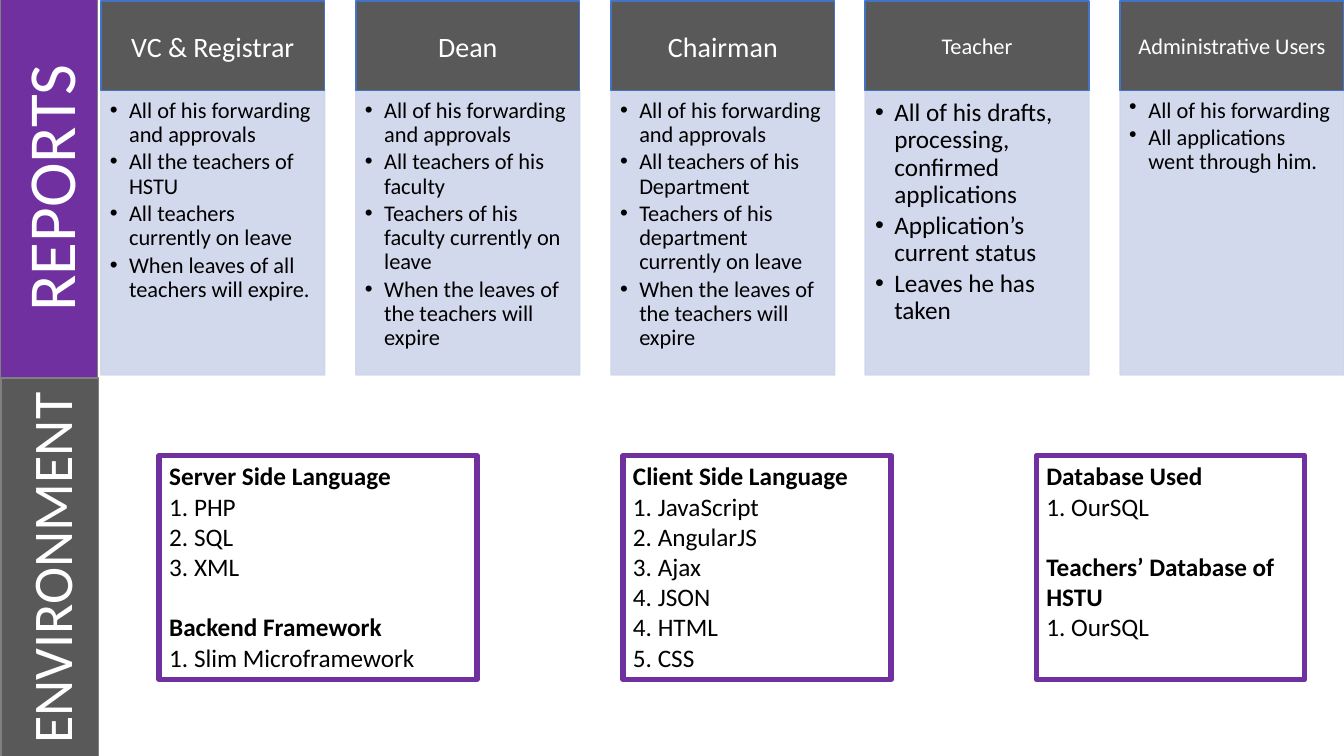
from dataclasses import dataclass

import lxml.etree
import pptx
import pptx.dml.color
import pptx.enum.shapes
import pptx.enum.text
import pptx.oxml.ns
import pptx.shapes.autoshape
import pptx.slide
import pptx.util

EMU_PER_PX = 9144
COMPARISON_LAYOUT = 4
CARD_LEFT, CARD_SPAN, CARD_WIDTH = 100, 1011, 222
HEADER_TOP, HEADER_HEIGHT = 1, 89
LIST_TOP, LIST_HEIGHT = 89, 283
BULLET_INDENT = 19
PANEL_TOP, PANEL_HEIGHT = 452, 222

Anchor = pptx.enum.text.MSO_ANCHOR
Align = pptx.enum.text.PP_ALIGN
Shape = pptx.shapes.autoshape.Shape


@dataclass(frozen=True)
class Theme:
    font: str = "Calibri"
    purple: str = "7030A0"
    slate: str = "595959"
    banner_edge: str = "808080"
    header_edge: str = "4472C4"
    card: str = "CFD5EA"
    light: str = "FFFFFF"
    dark: str = "000000"
    reports: int = 48
    environment: int = 40
    large: int = 20
    medium: int = 18
    small: int = 16
    hairline: int = 1
    frame: int = 4
    card_alpha: int = 90
    bullet_gap: float = 0.15
    blank_line: float = 21.6


@dataclass(frozen=True)
class Area:
    left: int
    top: int
    width: int
    height: int


@dataclass(frozen=True)
class Insets:
    left: int
    top: int
    right: int
    bottom: int


@dataclass(frozen=True)
class Card:
    title: str
    items: tuple[str, ...]
    title_size: int
    item_size: int
    insets: Insets


@dataclass(frozen=True)
class Section:
    heading: str
    entries: tuple[str, ...]


@dataclass(frozen=True)
class Panel:
    left: int
    width: int
    sections: tuple[Section, ...]


THEME = Theme()
PLAIN_INSETS = Insets(10, 5, 10, 5)
HEADER_INSETS = Insets(12, 7, 12, 7)
LIST_INSETS = Insets(9, 9, 12, 14)
WIDE_LIST_INSETS = Insets(10, 10, 14, 16)

FORWARDING = "All of his forwarding"
APPROVALS = "All of his forwarding and approvals"
EXPIRY = "When the leaves of the teachers will expire"

CARDS = (
    Card("VC & Registrar",
         (APPROVALS, "All the teachers of HSTU", "All teachers currently on leave",
          "When leaves of all teachers will expire."),
         THEME.large, THEME.small, LIST_INSETS),
    Card("Dean",
         (APPROVALS, "All teachers of his faculty",
          "Teachers of his faculty currently on leave", EXPIRY),
         THEME.large, THEME.small, LIST_INSETS),
    Card("Chairman",
         (APPROVALS, "All teachers of his Department",
          "Teachers of his department currently on leave", EXPIRY),
         THEME.large, THEME.small, LIST_INSETS),
    Card("Teacher",
         ("All of his drafts, processing, confirmed applications",
          "Application’s current status", "Leaves he has taken"),
         THEME.small, THEME.medium, WIDE_LIST_INSETS),
    Card("Administrative Users",
         (FORWARDING, "All applications went through him."),
         THEME.small, THEME.small, LIST_INSETS),
)

PANELS = (
    Panel(158, 315, (
        Section("Server Side Language", ("1. PHP", "2. SQL", "3. XML")),
        Section("Backend Framework", ("1. Slim Microframework",)))),
    Panel(618, 266, (
        Section("Client Side Language",
                ("1. JavaScript", "2. AngularJS", "3. Ajax", "4. JSON", "4. HTML", "5. CSS")),)),
    Panel(1028, 266, (
        Section("Database Used", ("1. OurSQL",)),
        Section("Teachers’ Database of HSTU", ("1. OurSQL",)))),
)


def px(length: int) -> pptx.util.Emu:
    return pptx.util.Emu(length * EMU_PER_PX)


def rgb(color: str) -> pptx.dml.color.RGBColor:
    return pptx.dml.color.RGBColor.from_string(color)


def add_box(page: pptx.slide.Slide) -> Shape:
    return page.shapes.add_shape(pptx.enum.shapes.MSO_SHAPE.RECTANGLE, 0, 0, 0, 0)


def style_box(box: Shape, area: Area, fill: str | None, edge: str, weight: int) -> None:
    box.left, box.top = px(area.left), px(area.top)
    box.width, box.height = px(area.width), px(area.height)
    box.shadow.inherit = False
    if fill:
        box.fill.solid()
        box.fill.fore_color.rgb = rgb(fill)
    else:
        box.fill.background()
    box.line.color.rgb = rgb(edge)
    box.line.width = pptx.util.Pt(weight)


def write(box: Shape, lines: list[str], size: int, color: str, insets: Insets,
          anchor: Anchor, align: Align) -> None:
    frame = box.text_frame
    frame.text = "\n".join(lines)
    frame.word_wrap = True
    frame.auto_size = pptx.enum.text.MSO_AUTO_SIZE.NONE
    frame.vertical_anchor = anchor
    frame.margin_left, frame.margin_top = px(insets.left), px(insets.top)
    frame.margin_right, frame.margin_bottom = px(insets.right), px(insets.bottom)
    for para in frame.paragraphs:
        para.alignment = align
        para.space_before = pptx.util.Pt(0)
        for span in para.runs:
            span.font.name = THEME.font
            span.font.size = pptx.util.Pt(size)
            span.font.bold = False
            span.font.color.rgb = rgb(color)


def make_translucent(box: Shape) -> None:
    for color in box._element.spPr.iter(pptx.oxml.ns.qn("a:srgbClr")):
        lxml.etree.SubElement(color, pptx.oxml.ns.qn("a:alpha"), val=str(THEME.card_alpha * 1000))


def add_bullets(box: Shape, size: int) -> None:
    for para in box.text_frame.paragraphs:
        para.line_spacing = 0.9
        para.space_after = pptx.util.Pt(size * THEME.bullet_gap)
        properties = para._p.get_or_add_pPr()
        properties.set("marL", str(px(BULLET_INDENT)))
        properties.set("indent", str(-px(BULLET_INDENT)))
        lxml.etree.SubElement(properties, pptx.oxml.ns.qn("a:buChar"), char="•")


def draw_banner(box: Shape, text: str, area: Area, fill: str, size: int) -> None:
    style_box(box, area, fill, THEME.banner_edge, THEME.hairline)
    box.rotation = 270
    write(box, [text], size, THEME.light, PLAIN_INSETS, Anchor.MIDDLE, Align.CENTER)


def draw_card(header: Shape, body: Shape, card: Card, left: int) -> None:
    style_box(header, Area(left, HEADER_TOP, CARD_WIDTH, HEADER_HEIGHT),
              THEME.slate, THEME.header_edge, THEME.hairline)
    write(header, [card.title], card.title_size, THEME.light, HEADER_INSETS,
          Anchor.MIDDLE, Align.CENTER)
    style_box(body, Area(left, LIST_TOP, CARD_WIDTH, LIST_HEIGHT),
              THEME.card, THEME.card, THEME.hairline)
    make_translucent(body)
    write(body, list(card.items), card.item_size, THEME.dark, card.insets,
          Anchor.TOP, Align.LEFT)
    add_bullets(body, card.item_size)


def draw_panel(box: Shape, panel: Panel) -> None:
    style_box(box, Area(panel.left, PANEL_TOP, panel.width, PANEL_HEIGHT),
              None, THEME.purple, THEME.frame)
    lines = [line for section in panel.sections for line in (section.heading, *section.entries)]
    write(box, lines, THEME.medium, THEME.dark, PLAIN_INSETS, Anchor.TOP, Align.LEFT)
    headings = {section.heading for section in panel.sections}
    for index, para in enumerate(box.text_frame.paragraphs):
        if para.text in headings:
            para.runs[0].font.bold = True
            para.space_before = pptx.util.Pt(THEME.blank_line if index else 0)


def main() -> None:
    deck = pptx.Presentation()
    deck.slide_width, deck.slide_height = px(1333), px(750)
    page = deck.slides.add_slide(deck.slide_layouts[COMPARISON_LAYOUT])
    title, *bodies = page.placeholders
    draw_banner(add_box(page), "ENVIRONMENT", Area(-139, 515, 377, 97),
                THEME.slate, THEME.environment)
    draw_banner(title, "REPORTS", Area(-140, 138, 377, 97), THEME.purple, THEME.reports)
    for index, card in enumerate(CARDS):
        body = bodies[index] if index < len(bodies) else add_box(page)
        left = CARD_LEFT + round(CARD_SPAN * index / (len(CARDS) - 1))
        draw_card(add_box(page), body, card, left)
    for panel in PANELS:
        draw_panel(add_box(page), panel)
    deck.save("out.pptx")


if __name__ == "__main__":
    main()
